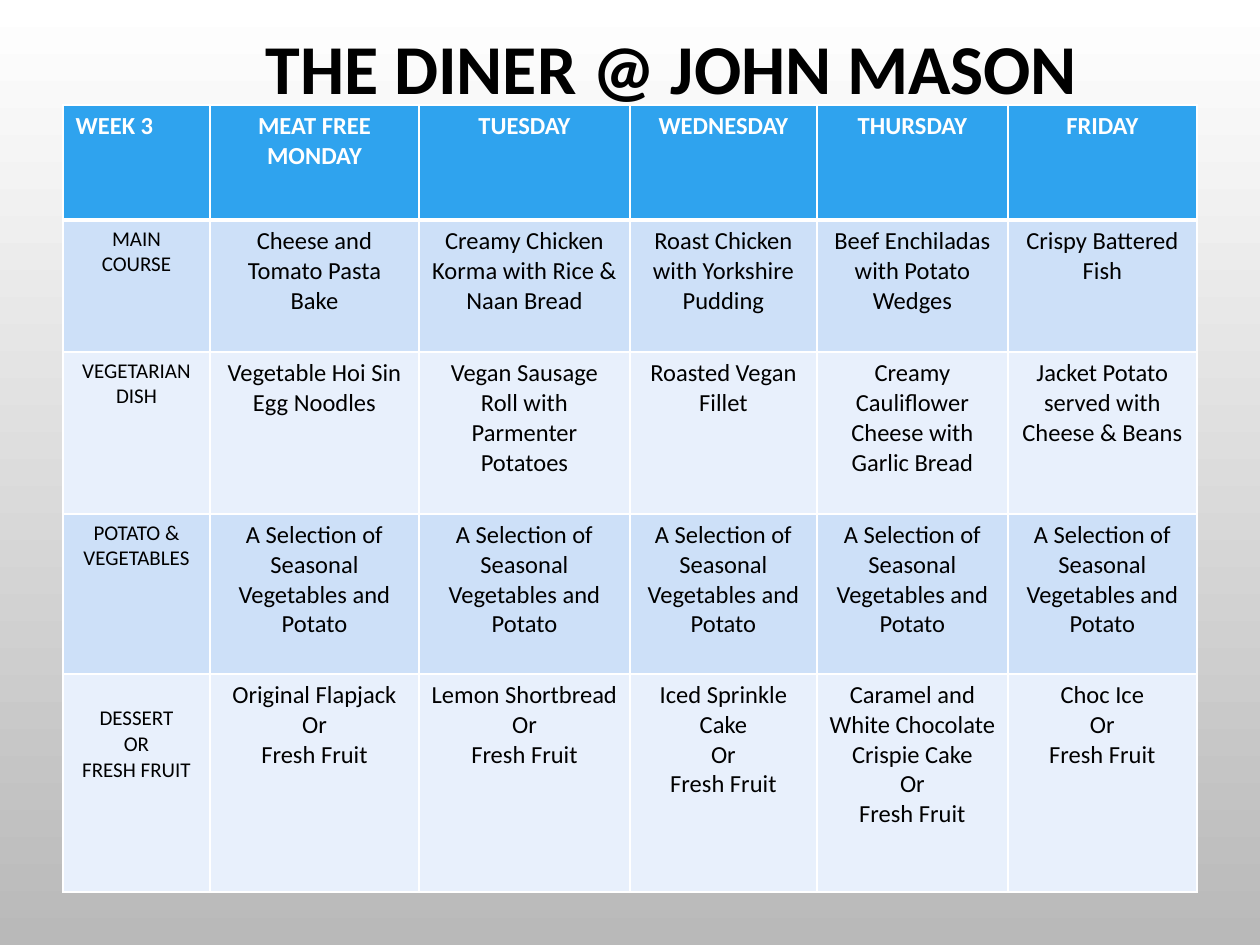
from lxml import etree
from pptx import Presentation
from pptx.dml.color import RGBColor
from pptx.enum.text import MSO_ANCHOR, PP_ALIGN
from pptx.oxml.ns import qn
from pptx.util import Pt

PX = 914400 // 126
LEFT, CENTER = PP_ALIGN.LEFT, PP_ALIGN.CENTER
BOTTOM = MSO_ANCHOR.BOTTOM
FONT = "Calibri"
HEX = {"white": "FFFFFF", "grey": "B9B9B9", "black": "000000",
       "head": "2FA3EE", "dark": "CDE0F8", "light": "E8F0FC"}

COLS = [147, 209, 211, 187, 191, 189]
ROWS = [115, 132, 162, 160, 218]
VEG = "A Selection of Seasonal Vegetables and Potato"
FRUIT = "\nOr\nFresh Fruit"
MENU = [
    ["WEEK 3", "MEAT FREE MONDAY", "TUESDAY", "WEDNESDAY", "THURSDAY", "FRIDAY"],
    ["MAIN\nCOURSE", "Cheese and Tomato Pasta Bake",
     "Creamy Chicken Korma with Rice & Naan Bread",
     "Roast Chicken with Yorkshire Pudding",
     "Beef Enchiladas with Potato Wedges", "Crispy Battered Fish"],
    ["VEGETARIAN DISH", "Vegetable Hoi Sin Egg Noodles",
     "Vegan Sausage Roll with Parmenter Potatoes", "Roasted Vegan Fillet",
     "Creamy Cauliflower Cheese with Garlic Bread",
     "Jacket Potato served with Cheese & Beans"],
    ["POTATO & VEGETABLES"] + [VEG] * 5,
    ["DESSERT\nOR\nFRESH FRUIT"] + [sweet + FRUIT for sweet in (
        "Original Flapjack", "Lemon Shortbread", "Iced Sprinkle Cake",
        "Caramel and White Chocolate Crispie Cake", "Choc Ice")],
]


def rgb(name):
    return RGBColor.from_string(HEX[name])


class Deck:
    def __init__(self, wide, high):
        self.prs = Presentation()
        self.prs.slide_width, self.prs.slide_height = wide * PX, high * PX
        self.slide = self.prs.slides.add_slide(self.prs.slide_layouts[6])

    def back(self, top, foot):
        fill = self.slide.background.fill
        fill.gradient()
        fill.gradient_angle = 270
        for stop, name in zip(fill.gradient_stops, (top, foot)):
            stop.color.rgb = rgb(name)

    def text(self, frame, words, size, color, bold=False, align=CENTER):
        """Fill a text frame, one paragraph for each line."""
        for i, line in enumerate(words.split("\n")):
            para = frame.add_paragraph() if i else frame.paragraphs[0]
            para.alignment = align
            run = para.add_run()
            run.text = line
            font = run.font
            font.name, font.size, font.bold = FONT, Pt(size), bold
            font.color.rgb = rgb(color)

    def title(self, words, x, y, w, h):
        box = self.slide.shapes.add_textbox(x * PX, y * PX, w * PX, h * PX)
        frame = box.text_frame
        frame.word_wrap = True
        frame.vertical_anchor = BOTTOM
        self.text(frame, words, 40, "black", bold=True)
        frame.paragraphs[0].line_spacing = 0.9

    def edge(self, cell, **widths):
        """Draw white cell borders; widths are in points by side."""
        props = cell._tc.get_or_add_tcPr()
        for side in "LRTB":
            line = etree.SubElement(props, qn("a:ln" + side),
                                    w=str(Pt(widths.get(side, 1))))
            fill = etree.SubElement(line, qn("a:solidFill"))
            etree.SubElement(fill, qn("a:srgbClr"), val=HEX["white"])

    def table(self, x, y, cols, rows, data):
        table = self.slide.shapes.add_table(
            len(rows), len(cols), x * PX, y * PX,
            sum(cols) * PX, sum(rows) * PX).table
        for col, w in zip(table.columns, cols):
            col.width = w * PX
        for row, h in zip(table.rows, rows):
            row.height = h * PX
        for r, line in enumerate(data):
            for c, words in enumerate(line):
                cell = table.cell(r, c)
                thick = {0: {"B": 3}, 1: {"T": 3}}.get(r, {})
                self.edge(cell, **thick)
                cell.fill.solid()
                shade = "dark" if r % 2 else "light"
                cell.fill.fore_color.rgb = rgb(shade if r else "head")
                self.text(cell.text_frame, words,
                          12 if r and not c else 14,
                          "black" if r else "white", bold=not r,
                          align=CENTER if r or c else LEFT)
        return table


def main():
    deck = Deck(1260, 945)
    deck.back("white", "grey")
    deck.title("THE DINER @ JOHN MASON", 136, 32, 1071, 84)
    menu = deck.table(63, 105, COLS, ROWS, MENU)
    menu.cell(4, 0).margin_top = 32 * PX
    deck.prs.save("out.pptx")


if __name__ == "__main__":
    main()
